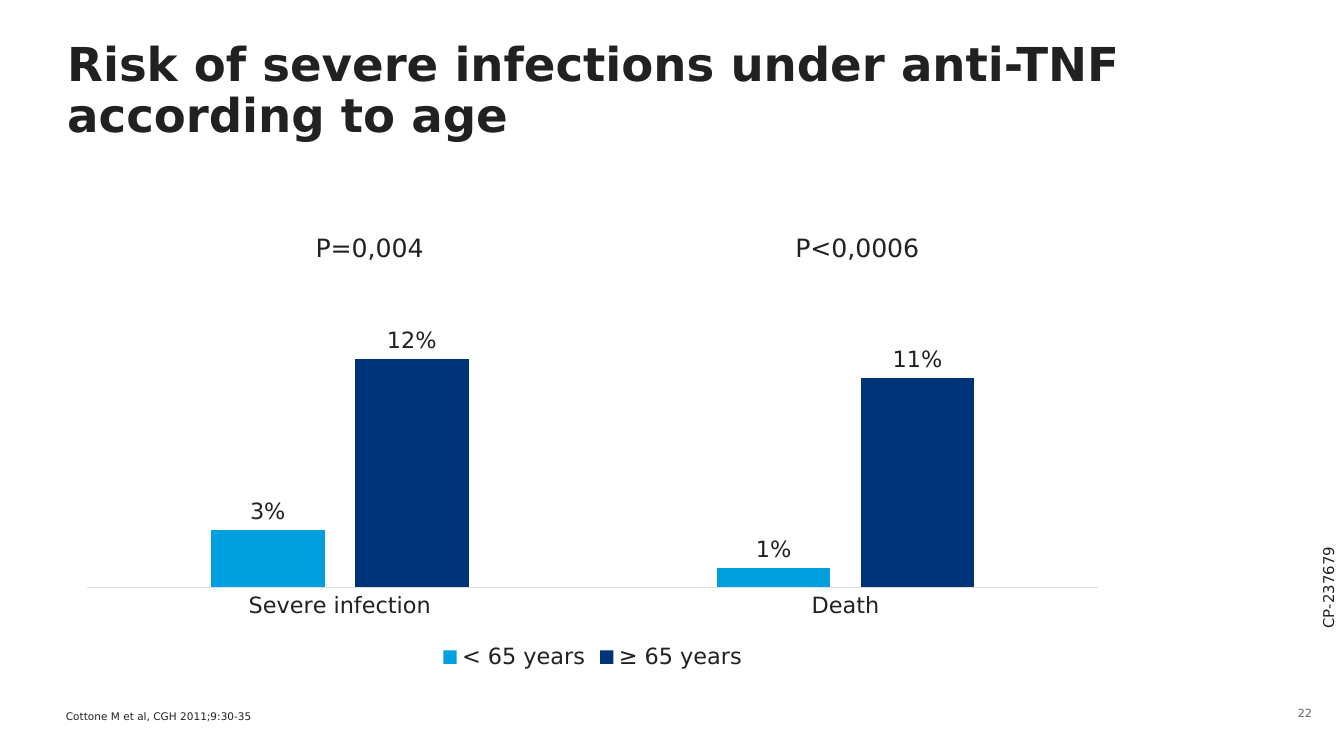
from dataclasses import dataclass

from pptx import Presentation
from pptx.chart import data as chart_data
from pptx.dml.color import RGBColor
from pptx.enum import chart as ch, text as tx
from pptx.util import Pt

FONT = "DejaVu Sans"
INK = RGBColor(0x21, 0x21, 0x21)
GREY = RGBColor(0x64, 0x64, 0x64)
AXIS_GREY = RGBColor(0xDE, 0xDE, 0xDE)
LIGHT_BLUE = RGBColor(0x00, 0xA0, 0xDF)
DARK_BLUE = RGBColor(0x00, 0x34, 0x79)


@dataclass
class Label:
    text: str
    left: float
    top: float
    width: float
    height: float
    size: float
    color: RGBColor = INK
    align: tx.PP_ALIGN = tx.PP_ALIGN.LEFT
    anchor: tx.MSO_ANCHOR = tx.MSO_ANCHOR.TOP
    wrap: bool = True
    inset: bool = True
    rotation: float = 0


@dataclass
class AgeGroup:
    name: str
    risks: tuple[float, ...]
    color: RGBColor


LABELS = [
    Label("P=0,004", 162, 121, 73.4, 23.8, 13.5, wrap=False),
    Label("P<0,0006", 419, 121, 82, 23.8, 13.5, wrap=False),
    Label("Cottone M et al, CGH 2011;9:30-35", 35.3, 380.2, 495.4, 7.2, 5.6,
          anchor=tx.MSO_ANCHOR.BOTTOM, inset=False),
    Label("22", 687.6, 372.2, 22.3, 19.4, 6, GREY, tx.PP_ALIGN.RIGHT,
          tx.MSO_ANCHOR.MIDDLE),
    Label("CP-237679", 679.7, 303.1, 64.1, 17.3, 8, rotation=270),
]

OUTCOMES = ("Severe infection", "Death")
AGE_GROUPS = [
    AgeGroup("< 65 years", (0.03, 0.01), LIGHT_BLUE),
    AgeGroup("≥ 65 years", (0.12, 0.11), DARK_BLUE),
]


def style_font(font, size: float, color: RGBColor = INK, bold: bool = False) -> None:
    font.name, font.size, font.bold = FONT, Pt(size), bold
    font.color.rgb = color


def clear_margins(frame) -> None:
    frame.margin_left = frame.margin_right = Pt(0)
    frame.margin_top = frame.margin_bottom = Pt(0)


def add_title(slide, text: str) -> None:
    title = slide.shapes.title
    title.left, title.top = Pt(36), Pt(22.3)
    title.width, title.height = Pt(599), Pt(27.4)
    frame = title.text_frame
    frame.text = text
    frame.word_wrap = True
    frame.vertical_anchor = tx.MSO_ANCHOR.TOP
    frame.auto_size = tx.MSO_AUTO_SIZE.SHAPE_TO_FIT_TEXT
    clear_margins(frame)
    para = frame.paragraphs[0]
    para.alignment = tx.PP_ALIGN.LEFT
    para.line_spacing = 0.9
    para.space_before = Pt(0)
    style_font(para.font, 25, bold=True)


def add_label(slide, label: Label) -> None:
    box = slide.shapes.add_textbox(
        Pt(label.left), Pt(label.top), Pt(label.width), Pt(label.height))
    box.rotation = label.rotation
    frame = box.text_frame
    frame.text = label.text
    frame.word_wrap = label.wrap
    frame.vertical_anchor = label.anchor
    if not label.inset:
        clear_margins(frame)
    para = frame.paragraphs[0]
    para.alignment = label.align
    style_font(para.font, label.size, label.color)


def add_risk_chart(slide) -> None:
    data = chart_data.CategoryChartData(number_format="0%")
    data.categories = OUTCOMES
    for group in AGE_GROUPS:
        data.add_series(group.name, group.risks)
    chart = slide.shapes.add_chart(
        ch.XL_CHART_TYPE.COLUMN_CLUSTERED,
        Pt(35.3), Pt(105.8), Pt(564.5), Pt(256.3), data).chart
    style_font(chart.font, 10)
    chart.has_title = False

    # Axes
    outcomes = chart.category_axis
    outcomes.major_tick_mark = outcomes.minor_tick_mark = ch.XL_TICK_MARK.NONE
    outcomes.format.line.color.rgb = AXIS_GREY
    outcomes.format.line.width = Pt(0.75)
    style_font(outcomes.tick_labels.font, 12)
    risks = chart.value_axis
    risks.minimum_scale, risks.maximum_scale = 0, 0.2
    risks.has_major_gridlines = False
    risks.visible = False

    # Legend
    chart.has_legend = True
    chart.legend.position = ch.XL_LEGEND_POSITION.BOTTOM
    chart.legend.include_in_layout = False
    style_font(chart.legend.font, 12)

    # Columns and their values
    plot = chart.plots[0]
    plot.gap_width, plot.overlap = 219, -27
    plot.vary_by_categories = False
    for series, group in zip(plot.series, AGE_GROUPS):
        series.format.fill.solid()
        series.format.fill.fore_color.rgb = group.color
        values = series.data_labels
        values.show_value = True
        values.position = ch.XL_LABEL_POSITION.OUTSIDE_END
        values.number_format = "0%"
        values.number_format_is_linked = False
        style_font(values.font, 12)


def main() -> None:
    deck = Presentation()
    deck.slide_width, deck.slide_height = Pt(720), Pt(405)
    page = deck.slides.add_slide(deck.slide_layouts[5])
    add_title(page, "Risk of severe infections under anti-TNF according to age")
    add_risk_chart(page)
    for label in LABELS:
        add_label(page, label)
    deck.save("out.pptx")


if __name__ == "__main__":
    main()
